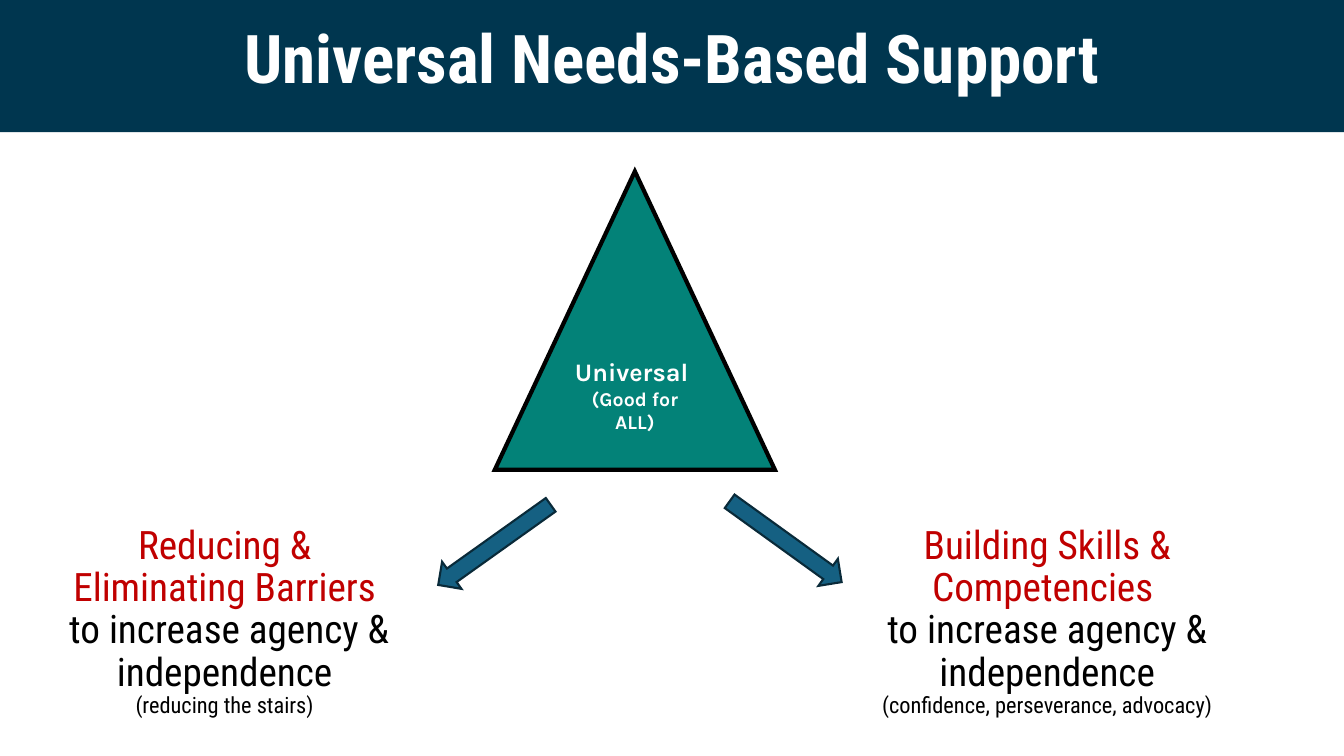
"""Build the Universal Needs-Based Support slide."""
from dataclasses import dataclass
from typing import Any

from lxml.etree import SubElement
from pptx import Presentation
from pptx.dml.color import RGBColor
from pptx.enum.shapes import MSO_SHAPE
from pptx.enum.text import MSO_ANCHOR, MSO_AUTO_SIZE, PP_ALIGN
from pptx.oxml.ns import qn
from pptx.shapes.autoshape import Shape
from pptx.slide import Slide
from pptx.text.text import TextFrame
from pptx.util import Cm, Pt


@dataclass(frozen=True)
class Theme:
    heading_font: str = "Roboto Condensed"
    label_font: str = "Karla"
    white: str = "FFFFFF"
    black: str = "000000"
    navy: str = "00364F"
    teal: str = "038278"
    red: str = "C00000"
    arrow_fill: str = "156082"
    arrow_line: str = "092A39"
    title_size: int = 48
    goal_size: int = 28
    label_size: int = 18
    label_note_size: int = 14
    goal_note_size: int = 16


@dataclass(frozen=True)
class Box:
    left: float
    top: float
    width: float
    height: float


@dataclass(frozen=True)
class Line:
    text: str
    size: int
    color: str
    font: str = "Roboto Condensed"
    bold: bool = False


@dataclass(frozen=True)
class Figure:
    kind: MSO_SHAPE
    box: Box
    fill: str
    line: str = ""
    line_width: float = 0
    rotation: float = 0


@dataclass(frozen=True)
class Goal:
    box: Box
    action: str
    purpose: str
    example: str


THEME = Theme()
SLIDE_WIDTH, SLIDE_HEIGHT = 33.87, 19.05
TITLE_BOX = Box(4.85, 0.51, 24.18, 2.36)
TITLE = Line("Universal Needs-Based Support", THEME.title_size, THEME.white, bold=True)
BANNER = Figure(MSO_SHAPE.RECTANGLE, Box(0, 0, SLIDE_WIDTH, 3.33), THEME.navy)
TRIANGLE = Figure(MSO_SHAPE.ISOSCELES_TRIANGLE, Box(12.47, 4.32, 7.06, 7.52),
                  THEME.teal, THEME.black, 3)
TRIANGLE_LINES = [
    Line("Universal ", THEME.label_size, THEME.white, THEME.label_font, True),
    Line("(Good for ALL)", THEME.label_note_size, THEME.white, THEME.label_font, True),
]
GOALS = [
    Goal(Box(1.14, 13.11, 9.04, 2.36), "Reducing & Eliminating Barriers",
         " to increase agency & independence", "(reducing the stairs)"),
    Goal(Box(21.03, 13.11, 10.72, 2.36), "Building Skills & Competencies ",
         "to increase agency & independence", "(confidence, perseverance, advocacy)"),
]
ARROWS = [
    Figure(MSO_SHAPE.RIGHT_ARROW, Box(left, top, 3.48, 0.84),
           THEME.arrow_fill, THEME.arrow_line, 1.5, rotation)
    for left, top, rotation in [(10.72, 13.31, 144.5), (18.06, 13.23, 35.8)]
]


def set_attributes(target: Any, values: dict[str, Any]) -> None:
    for name, value in values.items():
        setattr(target, name, value)


def lengths(box: Box) -> dict[str, Cm]:
    return {name: Cm(getattr(box, name)) for name in ("left", "top", "width", "height")}


def write_lines(frame: TextFrame, lines: list[Line], anchor: MSO_ANCHOR,
                spacing: float) -> None:
    set_attributes(frame, {"word_wrap": True, "auto_size": MSO_AUTO_SIZE.NONE,
                           "vertical_anchor": anchor})
    for index, line in enumerate(lines):
        paragraph = frame.paragraphs[0] if index == 0 else frame.add_paragraph()
        set_attributes(paragraph, {"alignment": PP_ALIGN.CENTER, "line_spacing": spacing,
                                   "space_before": Pt(0)})
        run = paragraph.add_run()
        run.text = line.text
        set_attributes(run.font, {"name": line.font, "size": Pt(line.size),
                                  "bold": line.bold})
        run.font.color.rgb = RGBColor.from_string(line.color)


def draw_figure(slide: Slide, figure: Figure) -> Shape:
    shape = slide.shapes.add_shape(figure.kind, **lengths(figure.box))
    shape.shadow.inherit = False
    shape.rotation = figure.rotation
    shape.fill.solid()
    shape.fill.fore_color.rgb = RGBColor.from_string(figure.fill)
    if figure.line:
        shape.line.color.rgb = RGBColor.from_string(figure.line)
        shape.line.width = Pt(figure.line_width)
        outline = shape._element.spPr.find(qn("a:ln"))
        SubElement(outline, qn("a:miter"), lim="800000")
    else:
        shape.line.fill.background()
    return shape


def draw_title(slide: Slide) -> None:
    banner = draw_figure(slide, BANNER)
    title = slide.shapes.title
    set_attributes(title, lengths(TITLE_BOX))
    write_lines(title.text_frame, [TITLE], MSO_ANCHOR.TOP, 0.9)
    title._element.addprevious(banner._element)


def draw_goal(slide: Slide, goal: Goal) -> None:
    text_box = slide.shapes.add_textbox(**lengths(goal.box))
    lines = [Line(goal.action, THEME.goal_size, THEME.red),
             Line(goal.purpose, THEME.goal_size, THEME.black),
             Line(goal.example, THEME.goal_note_size, THEME.black)]
    write_lines(text_box.text_frame, lines, MSO_ANCHOR.TOP, 0.9)


def main() -> None:
    presentation = Presentation()
    set_attributes(presentation, {"slide_width": Cm(SLIDE_WIDTH),
                                  "slide_height": Cm(SLIDE_HEIGHT)})
    slide = presentation.slides.add_slide(presentation.slide_layouts.get_by_name("Title Only"))
    draw_title(slide)
    triangle = draw_figure(slide, TRIANGLE)
    write_lines(triangle.text_frame, TRIANGLE_LINES, MSO_ANCHOR.MIDDLE, 1.0)
    for goal in GOALS:
        draw_goal(slide, goal)
    for arrow in ARROWS:
        draw_figure(slide, arrow)
    presentation.save("out.pptx")


if __name__ == "__main__":
    main()
